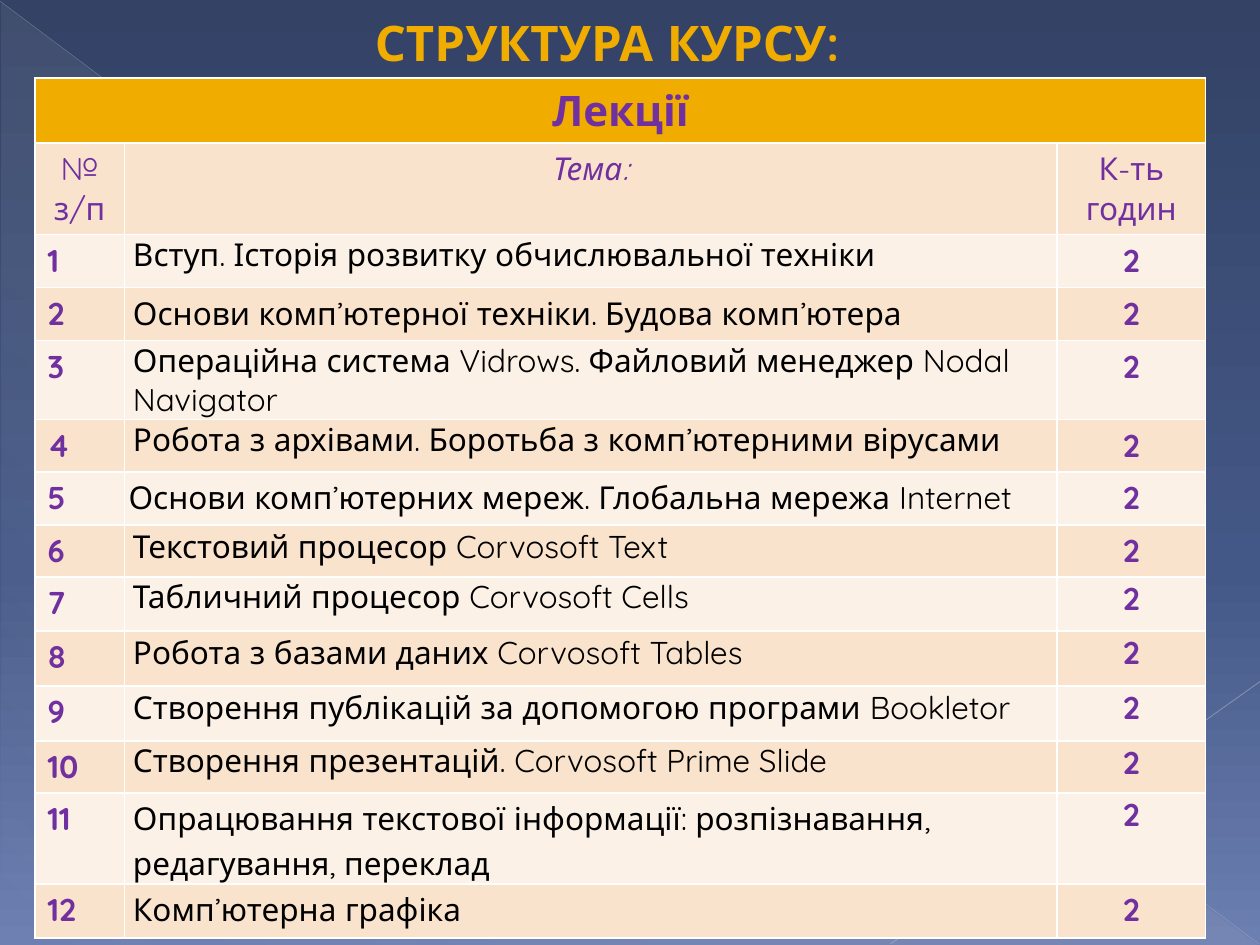
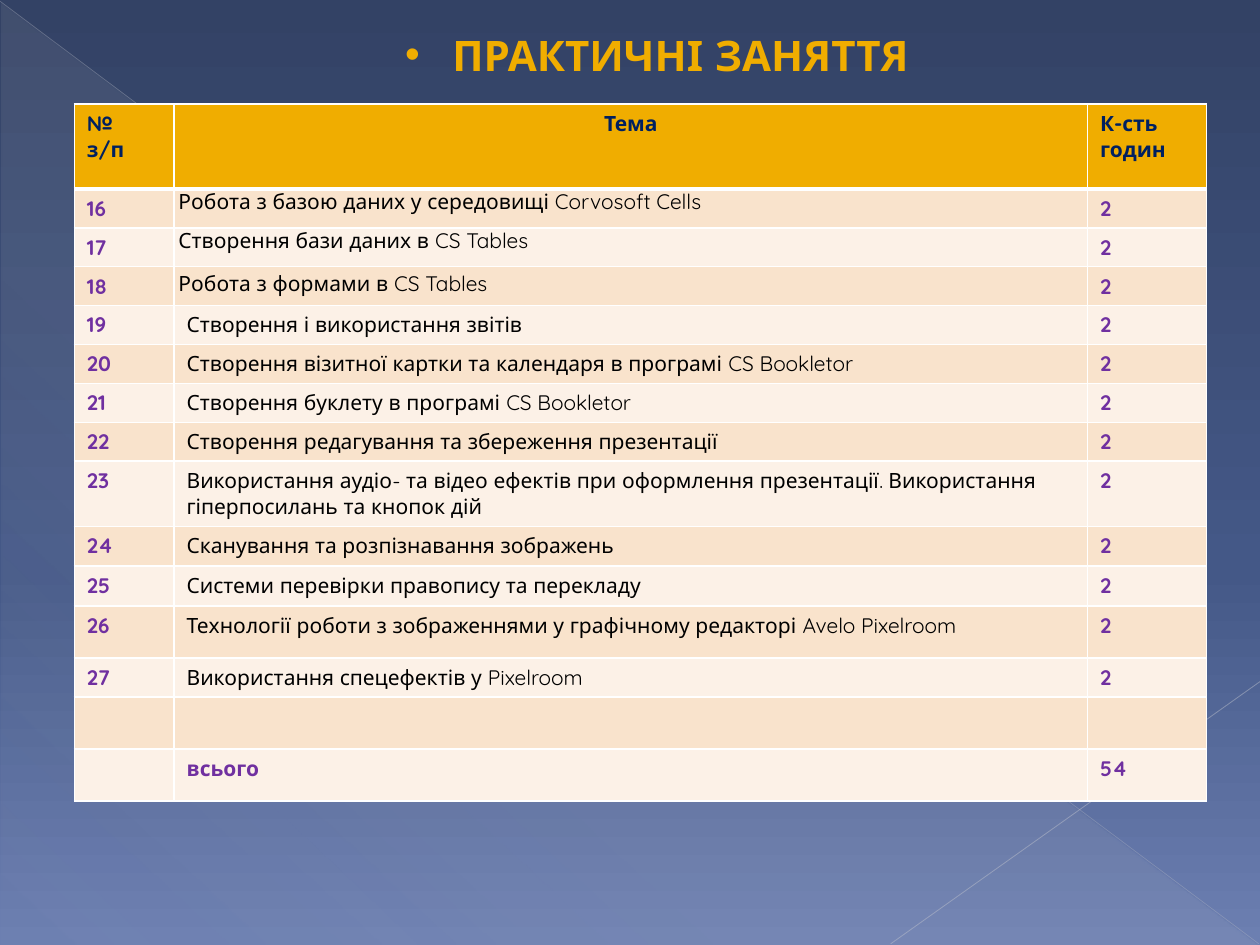
from dataclasses import dataclass

from lxml.etree import SubElement
from pptx import Presentation
from pptx.dml.color import RGBColor
from pptx.enum.shapes import MSO_CONNECTOR, MSO_SHAPE
from pptx.enum.text import MSO_ANCHOR, MSO_AUTO_SIZE, PP_ALIGN
from pptx.oxml.ns import qn
from pptx.util import Pt

FONT = "Quicksand"
GOLD = RGBColor(0xF0, 0xAD, 0x00)
PURPLE = RGBColor(0x70, 0x30, 0xA0)
NAVY = RGBColor(0x00, 0x20, 0x60)
BLACK = RGBColor(0, 0, 0)
WHITE = RGBColor(0xFF, 0xFF, 0xFF)
PEACH = RGBColor(0xF9, 0xE3, 0xCC)
CREAM = RGBColor(0xFC, 0xF1, 0xE7)
MIST = RGBColor(0xD4, 0xD4, 0xD6)
LONG_LINE = RGBColor(0xB9, 0xBD, 0xC8)
SHORT_LINE = RGBColor(0xC1, 0xC4, 0xCE)
SKY = [(0, RGBColor(0x33, 0x42, 0x65), 100),
       (60, RGBColor(0x44, 0x58, 0x87), 100),
       (100, RGBColor(0x6C, 0x7F, 0xB1), 100)]
HAZE = [(0, MIST, 10), (70, MIST, 8), (100, MIST, 1)]

TITLE_ONLY = 5
WIDE, NARROW = 5, 2.5  # side margins of topic cells without vertical margins


@dataclass
class Topic:
    text: str
    height: float
    spacing: float = 1
    side: float = None  # None keeps the normal cell margins
    tight_hours: bool = False


LECTURES = [
    Topic("Вступ. Історія розвитку обчислювальної техніки", 30.3, 1, WIDE),
    Topic("Основи комп’ютерної техніки. Будова комп’ютера", 30.3, 1.15, WIDE),
    Topic("Операційна система Vidrows. Файловий менеджер Nodal Navigator", 43.4, 1, WIDE),
    Topic("Робота з архівами. Боротьба з комп’ютерними вірусами", 28.6, 1, WIDE),
    Topic("Основи комп’ютерних мереж. Глобальна мережа Internet", 30.3, 1.15, NARROW),
    Topic("Текстовий процесор Corvosoft Text", 29.7, 1.06, WIDE),
    Topic("Табличний процесор Corvosoft Cells", 30.9, 1, WIDE, True),
    Topic("Робота з базами даних Corvosoft Tables", 31.4, 1.06, WIDE, True),
    Topic("Створення публікацій за допомогою програми Bookletor", 31.4, 1.06, WIDE, True),
    Topic("Створення презентацій. Corvosoft Prime Slide", 28.6, 1, WIDE, True),
    Topic("Опрацювання текстової інформації: розпізнавання, редагування, переклад",
          50.3, 1.15, WIDE, True),
    Topic("Комп’ютерна графіка", 30.9, 1.15, WIDE),
]
PRACTICALS = [
    Topic("Робота з базою даних у середовищі Corvosoft Cells", 21.8, 1, NARROW),
    Topic("Створення бази даних в CS Tables", 21.8, 1, NARROW),
    Topic("Робота з формами в CS Tables", 21.8, 1.15, NARROW),
    Topic("Створення і використання звітів", 21.8),
    Topic("Створення візитної картки та календаря в програмі CS Bookletor", 21.8),
    Topic("Створення буклету в програмі CS Bookletor", 21.8),
    Topic("Створення редагування та збереження презентації", 21.8),
    Topic("Використання аудіо- та відео ефектів при оформлення презентації. "
          "Використання гіперпосилань та кнопок дій", 36),
    Topic("Сканування та розпізнавання зображень", 22.8),
    Topic("Системи перевірки правопису та перекладу", 22.8),
    Topic("Технології роботи з зображеннями у графічному редакторі Avelo Pixelroom", 29.7),
    Topic("Використання спецефектів у Pixelroom", 21.2),
]
FIRST_PRACTICAL = 16
HOURS = 2


def set_alpha(color_element, percent):
    SubElement(color_element, qn("a:alpha"), val=str(percent * 1000))


def apply_gradient(fill, owner, stops, angle):
    """Give the fill inside the owner element these (position, colour, opacity) stops."""
    fill.gradient()
    gradient = next(owner.iter(qn("a:gradFill")))
    stop_list = gradient.find(qn("a:gsLst"))
    for old_stop in list(stop_list):
        stop_list.remove(old_stop)
    for position, color, opacity in stops:
        stop = SubElement(stop_list, qn("a:gs"), pos=str(position * 1000))
        set_alpha(SubElement(stop, qn("a:srgbClr"), val=str(color)), opacity)
    gradient.find(qn("a:lin")).set("ang", str(angle * 60000))


def add_ray(slide, start, end, color, width, opacity):
    ray = slide.shapes.add_connector(MSO_CONNECTOR.STRAIGHT, *map(Pt, start + end))
    ray.line.color.rgb = color
    ray.line.width = Pt(width)
    properties = ray.element.spPr
    set_alpha(next(properties.iter(qn("a:srgbClr"))), opacity)
    SubElement(properties, qn("a:effectLst"))
    return ray


def decorate_master(master, slide):
    """Draw the shared backdrop on the slide and move it behind the master's parts."""
    apply_gradient(master.background.fill, master.element, SKY, 90)
    corner = slide.shapes.add_shape(
        MSO_SHAPE.RIGHT_TRIANGLE, Pt(0.7), Pt(1.4), Pt(718.6), Pt(538.6))
    corner.shadow.inherit = False
    corner.line.fill.background()
    apply_gradient(corner.fill, corner.element, HAZE, 133)
    backdrop = [
        corner,
        add_ray(slide, (0, 0.7), (719.3, 539.3), LONG_LINE, 0.39, 35),
        add_ray(slide, (720, 389.5), (509, 539.3), SHORT_LINE, 0.47, 45),
    ]
    for order, part in enumerate(backdrop):
        part.element.xpath(".//p:cNvPr")[0].set("id", str(100 + order))
        master.shapes.element.insert(2 + order, part.element)


def style_text(frame, size, color, bold=True, italic=False, align=PP_ALIGN.LEFT, spacing=1):
    for paragraph in frame.paragraphs:
        paragraph.alignment = align
        paragraph.line_spacing = spacing
        for run in paragraph.runs:
            run.font.name = FONT
            run.font.size = Pt(size)
            run.font.bold = bold
            run.font.italic = italic
            run.font.color.rgb = color


def set_title(slide, text, left, top, width, height, size, bullet=False):
    title = slide.shapes.title
    title.left, title.top, title.width, title.height = map(Pt, (left, top, width, height))
    frame = title.text_frame
    frame.text = text
    frame.word_wrap = True
    frame.auto_size = MSO_AUTO_SIZE.NONE
    frame.vertical_anchor = MSO_ANCHOR.TOP
    style_text(frame, size, GOLD, align=PP_ALIGN.CENTER)
    if bullet:
        properties = frame.paragraphs[0]._p.get_or_add_pPr()
        properties.set("marL", str(Pt(27)))
        properties.set("indent", str(-Pt(27)))
        SubElement(properties, qn("a:buFont"), typeface="Arial")
        SubElement(properties, qn("a:buChar"), char="•")


def set_borders(cell, top=1, bottom=1):
    properties = cell._tc.get_or_add_tcPr()
    sides = {"a:lnL": 1, "a:lnR": 1, "a:lnT": top, "a:lnB": bottom}
    for order, (side, width) in enumerate(sides.items()):
        border = SubElement(properties, qn(side), w=str(Pt(width)))
        fill = SubElement(border, qn("a:solidFill"))
        SubElement(fill, qn("a:srgbClr"), val=str(WHITE))
        properties.insert(order, border)


def add_schedule(slide, left, top, columns, heights, header_rule=1):
    """Add an empty table with a gold first row and banded rows below it."""
    table = slide.shapes.add_table(
        len(heights), len(columns), Pt(left), Pt(top),
        Pt(sum(columns)), Pt(sum(heights))).table
    for column, width in zip(table.columns, columns):
        column.width = Pt(width)
    for index, (row, height) in enumerate(zip(table.rows, heights)):
        row.height = Pt(height)
        for cell in row.cells:
            cell.fill.solid()
            cell.fill.fore_color.rgb = GOLD if index == 0 else PEACH if index % 2 else CREAM
            set_borders(cell, top=header_rule if index == 1 else 1,
                        bottom=header_rule if index == 0 else 1)
    return table


def write(cell, text, size, color, side=None, **style):
    cell.text_frame.text = text
    if side is not None:
        cell.margin_left = cell.margin_right = Pt(side)
        cell.margin_top = cell.margin_bottom = 0
    style_text(cell.text_frame, size, color, **style)


def write_topics(table, topics, first_row, first_number, size, hours_align):
    for index, topic in enumerate(topics):
        number, subject, hours = table.rows[first_row + index].cells
        write(number, str(first_number + index), size, PURPLE)
        write(subject, topic.text, size, BLACK, topic.side, bold=False, spacing=topic.spacing)
        write(hours, str(HOURS), size, PURPLE, WIDE if topic.tight_hours else None,
              align=hours_align, spacing=1.06 if topic.tight_hours else 1)


def build_lectures(slide):
    set_title(slide, "СТРУКТУРА КУРСУ:", 167, 3.6, 360, 41, 28)
    heights = [36, 50.3] + [topic.height for topic in LECTURES]
    table = add_schedule(slide, 20, 44.5, (51, 533, 85), heights)
    table.cell(0, 0).merge(table.cell(0, 2))
    write(table.cell(0, 0), "Лекції", 24, PURPLE, align=PP_ALIGN.CENTER)
    for column, heading in enumerate(("№ з/п", "Тема:", "К-ть годин")):
        write(table.cell(1, column), heading, 18, PURPLE, bold=False,
              italic=column == 1, align=PP_ALIGN.CENTER)
    write_topics(table, LECTURES, 2, 1, 18, PP_ALIGN.CENTER)


def build_practicals(slide):
    set_title(slide, "ПРАКТИЧНІ ЗАНЯТТЯ", 99.4, 13, 552, 36, 24, bullet=True)
    heights = [48.5] + [topic.height for topic in PRACTICALS] + [29.7, 29.7]
    table = add_schedule(slide, 42.5, 59.5, (57, 522, 68), heights, header_rule=3)
    for column, heading in enumerate(("№\nз/п", "Тема", "К-сть\nгодин")):
        write(table.cell(0, column), heading, 12, NAVY,
              align=PP_ALIGN.CENTER if column == 1 else PP_ALIGN.LEFT)
    write_topics(table, PRACTICALS, 1, FIRST_PRACTICAL, 12, PP_ALIGN.LEFT)
    total_row = len(heights) - 1
    write(table.cell(total_row, 1), "всього", 12, PURPLE)
    write(table.cell(total_row, 2), "54", 12, PURPLE)


def main():
    deck = Presentation()
    deck.slide_width, deck.slide_height = Pt(720), Pt(540)
    layout = deck.slide_layouts[TITLE_ONLY]
    lectures, practicals = (deck.slides.add_slide(layout) for _ in range(2))
    decorate_master(deck.slide_master, lectures)
    build_lectures(lectures)
    build_practicals(practicals)
    deck.save("out.pptx")


if __name__ == "__main__":
    main()
